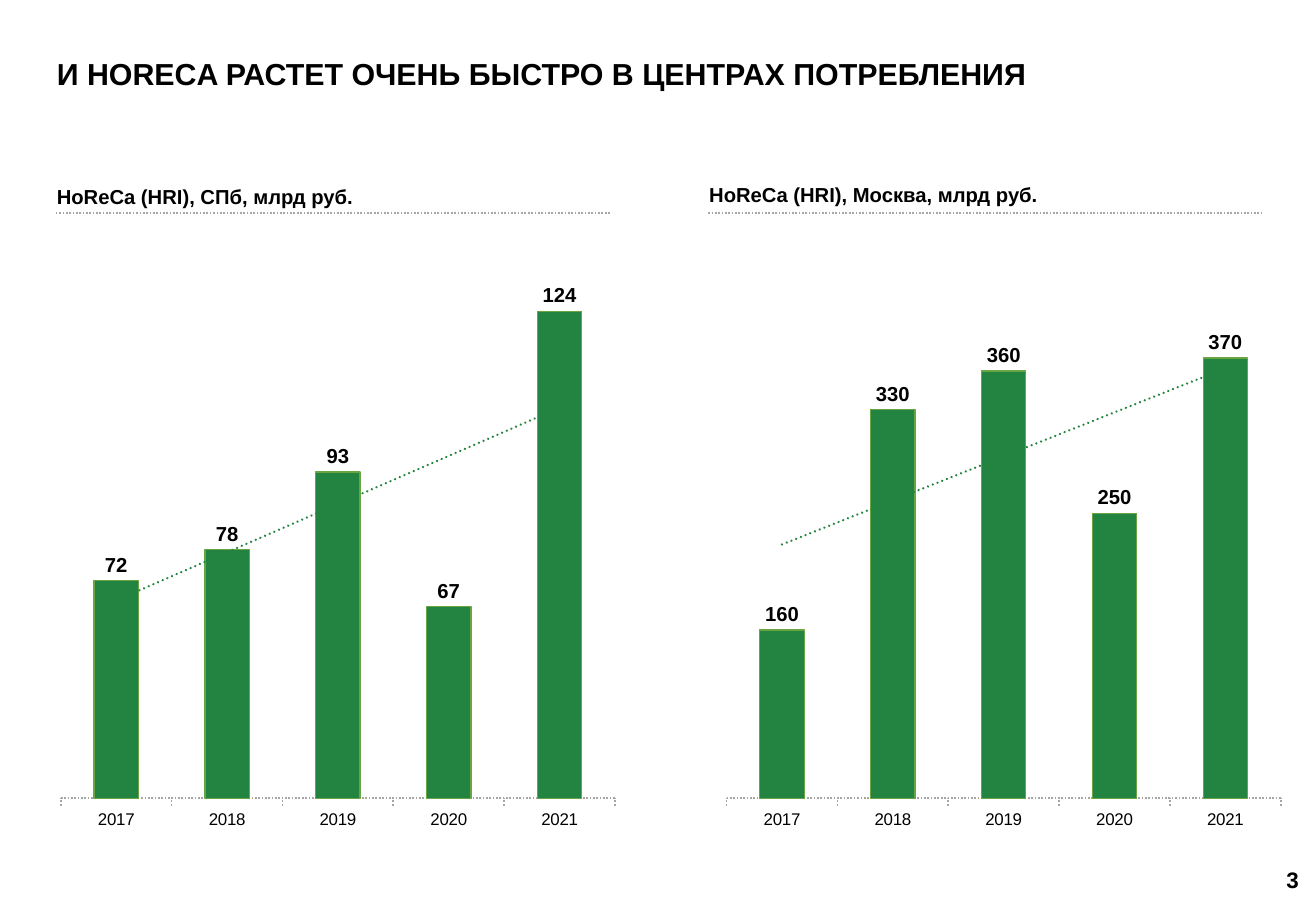
from lxml.etree import SubElement
from pptx import Presentation
from pptx.chart.data import CategoryChartData
from pptx.dml.color import RGBColor
from pptx.enum.chart import XL_CHART_TYPE, XL_LABEL_POSITION, XL_TICK_MARK
from pptx.enum.dml import MSO_LINE
from pptx.enum.shapes import MSO_CONNECTOR
from pptx.enum.text import MSO_ANCHOR, PP_ALIGN
from pptx.oxml import parse_xml
from pptx.oxml.ns import nsdecls, qn
from pptx.util import Pt

BLACK = RGBColor(0x00, 0x00, 0x00)
GREY = RGBColor(0xA6, 0xA6, 0xA6)
GREEN = RGBColor(0x23, 0x83, 0x40)
LIME = RGBColor(0x69, 0xA6, 0x43)
FONT = "Arial"
YEARS = ["2017", "2018", "2019", "2020", "2021"]
RULE_TOP = 126.4

# Line left, heading top, chart left, heading, values, axis maximum
PANELS = [
    (33.1, 105.8, 25.2, "HoReCa (HRI), СПб, млрд руб.", [72, 78, 93, 67, 124], 130),
    (419.8, 104.4, 419.8, "HoReCa (HRI), Москва, млрд руб.", [160, 330, 360, 250, 370], 430),
]

TREND_XML = f"""<c:trendline {nsdecls("c", "a")}>
  <c:spPr><a:ln w="19050" cap="rnd">
    <a:solidFill><a:srgbClr val="{GREEN}"/></a:solidFill><a:prstDash val="sysDot"/>
  </a:ln></c:spPr>
  <c:trendlineType val="linear"/><c:dispRSqr val="0"/><c:dispEq val="0"/>
</c:trendline>"""

LAYOUT_XML = f"""<c:layout {nsdecls("c")}><c:manualLayout>
  <c:layoutTarget val="inner"/><c:xMode val="edge"/><c:yMode val="edge"/>
  <c:x val="0.031"/><c:y val="0.088"/><c:w val="0.937"/><c:h val="0.838"/>
</c:manualLayout></c:layout>"""


def style_font(font, size, bold=False):
    font.name, font.size, font.bold = FONT, Pt(size), bold
    font.color.rgb = BLACK


def style_dotted(line):
    line.color.rgb = GREY
    line.width = Pt(1)
    line.dash_style = MSO_LINE.ROUND_DOT


def add_label(page, left, top, width, height, text, size, anchor=MSO_ANCHOR.TOP):
    box = page.shapes.add_textbox(Pt(left), Pt(top), Pt(width), Pt(height))
    frame = box.text_frame
    frame.word_wrap = True
    frame.vertical_anchor = anchor
    frame.text = text
    para = frame.paragraphs[0]
    style_font(para.runs[0].font, size, bold=True)
    return para


def add_growth_chart(page, left, top, width, height, values, maximum):
    data = CategoryChartData()
    data.categories = YEARS
    data.add_series("Series 1", values)
    chart = page.shapes.add_chart(
        XL_CHART_TYPE.COLUMN_CLUSTERED, Pt(left), Pt(top), Pt(width), Pt(height), data
    ).chart
    chart.has_legend = chart.has_title = False
    style_font(chart.font, 10)

    # Axes
    years_axis = chart.category_axis
    years_axis.major_tick_mark = XL_TICK_MARK.OUTSIDE
    style_font(years_axis.tick_labels.font, 10)
    style_dotted(years_axis.format.line)
    value_axis = chart.value_axis
    value_axis.visible = value_axis.has_major_gridlines = False
    value_axis.minimum_scale, value_axis.maximum_scale = 30, maximum

    # Columns and their values
    plot = chart.plots[0]
    plot.gap_width, plot.vary_by_categories = 150, False
    series = plot.series[0]
    series.format.fill.solid()
    series.format.fill.fore_color.rgb = GREEN
    series.format.line.color.rgb = LIME
    series.format.line.width = Pt(0.75)
    labels = series.data_labels
    labels.show_value = True
    labels.position = XL_LABEL_POSITION.OUTSIDE_END
    labels.number_format, labels.number_format_is_linked = "#,##0", False
    style_font(labels.font, 12, bold=True)

    # Trend line and plot area
    chart.element.xpath(".//c:ser/c:cat")[0].addprevious(parse_xml(TREND_XML))
    for layout in chart.element.xpath(".//c:plotArea/c:layout"):
        layout.getparent().remove(layout)
    chart.element.xpath(".//c:plotArea")[0].insert(0, parse_xml(LAYOUT_XML))


def add_panel(page, rule_left, heading_top, chart_left, heading, values, maximum):
    add_label(page, rule_left - 6.5, heading_top, 324, 21.6, heading, 12)
    rule = page.shapes.add_connector(
        MSO_CONNECTOR.STRAIGHT, Pt(rule_left), Pt(RULE_TOP), Pt(rule_left + 329), Pt(RULE_TOP)
    )
    style_dotted(rule.line)
    SubElement(rule.line._get_or_add_ln().getparent(), qn("a:effectLst"))
    add_growth_chart(page, chart_left, RULE_TOP + 7.5, 350.6, 366.5, values, maximum)


def add_title(page):
    para = add_label(page, 26.6, 18.7, 761.8, 39.6,
                     "И HORECA РАСТЕТ ОЧЕНЬ БЫСТРО В ЦЕНТРАХ ПОТРЕБЛЕНИЯ",
                     18, MSO_ANCHOR.BOTTOM)
    para.line_spacing = 0.9


def add_page_number(page):
    para = add_label(page, 717.1, 506.9, 59.8, 28.8, "3", 13.3, MSO_ANCHOR.MIDDLE)
    para.alignment = PP_ALIGN.RIGHT


def main():
    deck = Presentation()
    deck.slide_width, deck.slide_height = Pt(780), Pt(540)
    page = deck.slides.add_slide(deck.slide_layouts[6])
    add_title(page)
    for panel in PANELS:
        add_panel(page, *panel)
    add_page_number(page)
    deck.save("out.pptx")


if __name__ == "__main__":
    main()
